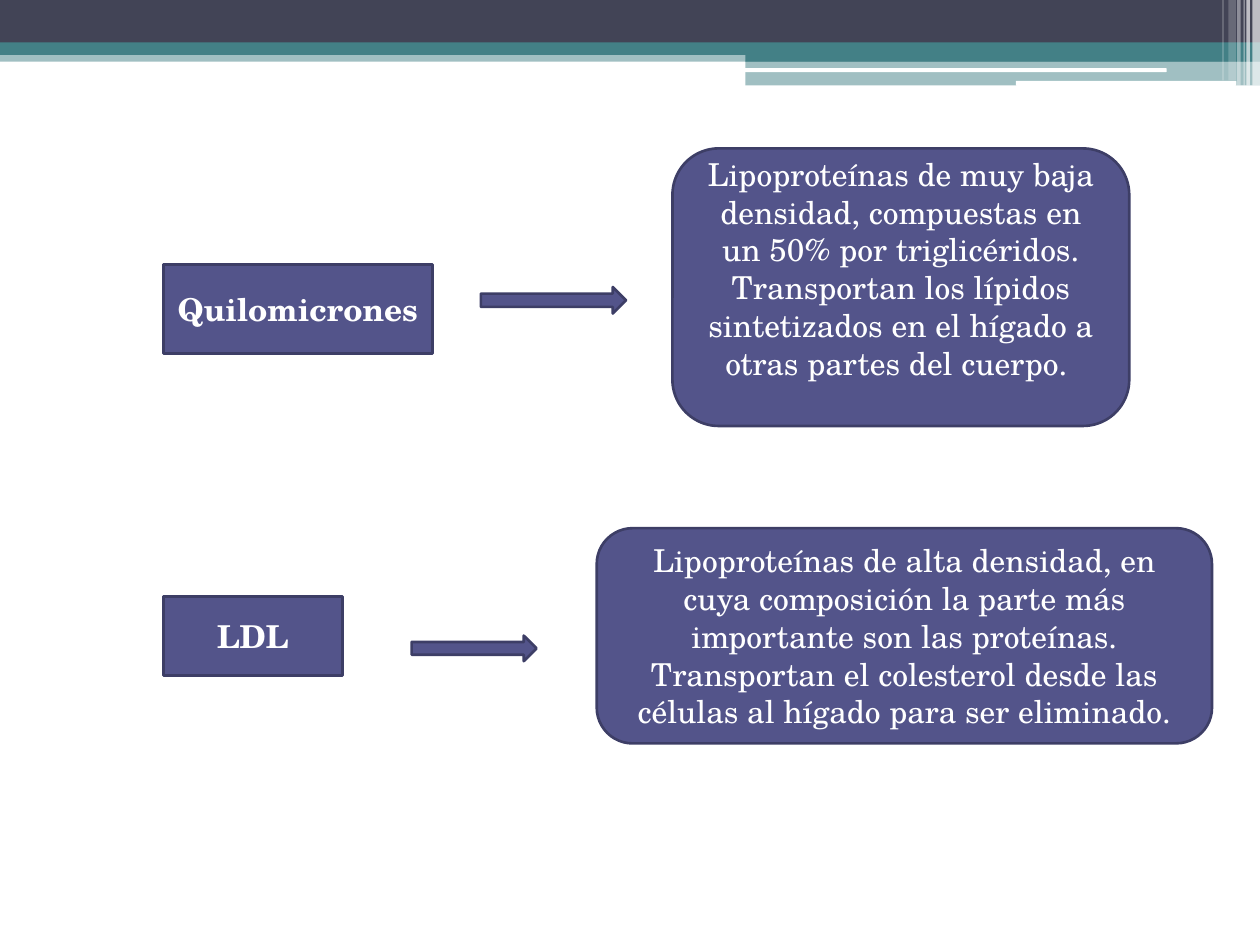
from pptx import Presentation
from pptx.dml.color import RGBColor
from pptx.enum import shapes, text
from pptx.oxml import parse_xml
from pptx.oxml.ns import nsdecls
from pptx.util import Pt

COLORS = {"slate": "424456", "teal": "438086", "white": "FFFFFF",
          "purple": "53548A", "outline": "3D3E66"}
FONT = "TeX Gyre Schola"
KIND = shapes.MSO_SHAPE
LINE_HEIGHT = 21.6

# Header bands: kind, left, top, width, height, colour, opacity in percent
BANDS = [
    (KIND.RECTANGLE, 0, 28.8, 720, 6.5, "teal", 50),
    (KIND.RECTANGLE, 0, 0, 720, 24.5, "slate", 100),
    (KIND.RECTANGLE, 0, 24.2, 720, 7.2, "teal", 100),
    (KIND.RECTANGLE, 426, 28, 294, 7.2, "teal", 100),
    (KIND.RECTANGLE, 426, 34.6, 294, 14.2, "teal", 50),
    (KIND.ROUNDED_RECTANGLE, 425.5, 39, 241.2, 2.2, "white", 100),
    (KIND.ROUNDED_RECTANGLE, 580.5, 46.2, 126, 2.8, "white", 100),
]
# Stripes at the right edge: left, width, height, opacity in percent
STRIPES = [
    (715.7, 4.3, 49, 65), (712.2, 2, 49, 65), (710.6, 0.7, 49, 60),
    (707, 2, 49, 40), (702, 4.3, 46, 20), (698.5, 0.7, 46, 30),
]
# Boxes are left, top, width, height
LIPOPROTEINS = [
    {"term": "Quilomicrones", "term_box": (93.4, 151, 153.6, 51),
     "arrow_box": (274.8, 164, 83, 15.2),
     "meaning": "Lipoproteínas de muy baja densidad, compuestas en un 50% por "
                "triglicéridos. Transportan los lípidos sintetizados en el "
                "hígado a otras partes del cuerpo. ",
     "meaning_box": (384.3, 84.8, 261, 158.6), "room_below": LINE_HEIGHT},
    {"term": "LDL", "term_box": (93.4, 340.8, 102.2, 45.2),
     "arrow_box": (235.2, 363.2, 71.4, 14.6),
     "meaning": "Lipoproteínas de alta densidad, en cuya composición la parte "
                "más importante son las proteínas. Transportan el colesterol "
                "desde las células al hígado para ser eliminado.",
     "meaning_box": (341, 301.8, 351.6, 123), "room_below": 0},
]


def rgb(name):
    return RGBColor.from_string(COLORS[name])


def add_filled(slide, kind, box, color, opacity=100):
    shape = slide.shapes.add_shape(kind, *(Pt(length) for length in box))
    shape.shadow.inherit = False
    shape.fill.solid()
    shape.fill.fore_color.rgb = rgb(color)
    shape.line.fill.background()
    if opacity < 100:
        alpha = f'<a:alpha {nsdecls("a")} val="{opacity * 1000}"/>'
        shape.fill._xPr.find(".//{*}srgbClr").append(parse_xml(alpha))
    return shape


def add_outlined(slide, kind, box):
    shape = add_filled(slide, kind, box, "purple")
    shape.line.color.rgb = rgb("outline")
    shape.line.width = Pt(1.5)
    return shape


def write(shape, wording, bold=False, room_below=0):
    frame = shape.text_frame
    frame.text = wording
    frame.word_wrap = True
    frame.vertical_anchor = text.MSO_ANCHOR.MIDDLE
    frame.margin_bottom = Pt(3.6 + room_below)
    paragraph = frame.paragraphs[0]
    paragraph.alignment = text.PP_ALIGN.CENTER
    font = paragraph.runs[0].font
    font.name, font.size, font.bold = FONT, Pt(18), bold
    font.color.rgb = rgb("white")


def main():
    deck = Presentation()
    deck.slide_width, deck.slide_height = Pt(720), Pt(540)
    slide = deck.slides.add_slide(deck.slide_layouts[6])

    for kind, *box, color, opacity in BANDS:
        add_filled(slide, kind, box, color, opacity)
    for left, width, height, opacity in STRIPES:
        add_filled(slide, KIND.RECTANGLE, (left, 0, width, height), "white", opacity)

    for item in LIPOPROTEINS:
        term = add_outlined(slide, KIND.RECTANGLE, item["term_box"])
        write(term, item["term"], bold=True)
        add_outlined(slide, KIND.RIGHT_ARROW, item["arrow_box"])
        meaning = add_outlined(slide, KIND.ROUNDED_RECTANGLE, item["meaning_box"])
        write(meaning, item["meaning"], room_below=item["room_below"])

    deck.save("out.pptx")


if __name__ == "__main__":
    main()
